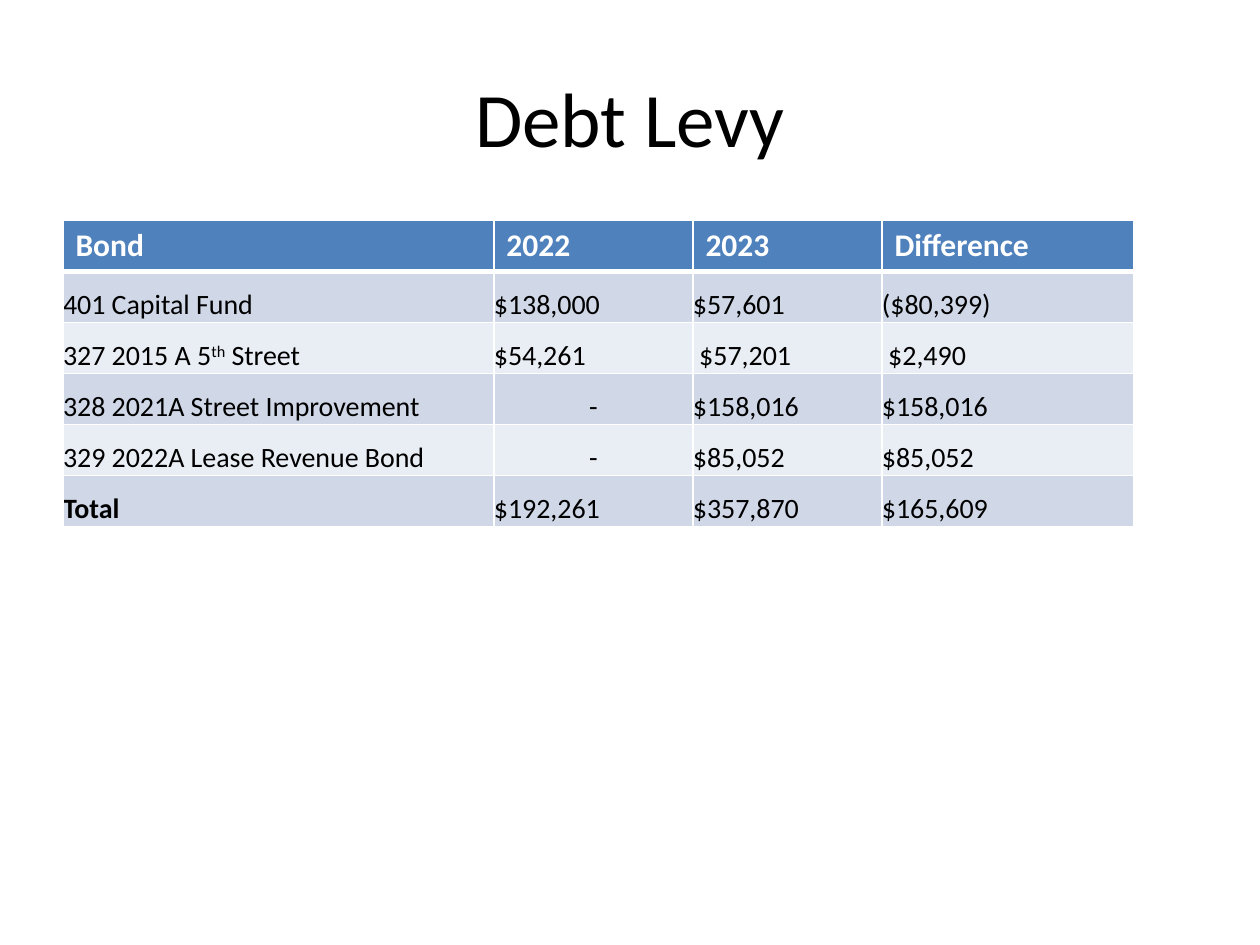
from dataclasses import dataclass

import pptx
import pptx.dml.color
import pptx.enum.text
import pptx.oxml
import pptx.oxml.ns
import pptx.util
from pptx.util import Inches

RGBColor = pptx.dml.color.RGBColor
Align = pptx.enum.text.PP_ALIGN
Anchor = pptx.enum.text.MSO_ANCHOR

BLACK = RGBColor(0x00, 0x00, 0x00)
WHITE = RGBColor(0xFF, 0xFF, 0xFF)
HEADER_BLUE = RGBColor(0x4F, 0x81, 0xBD)
BAND_DARK = RGBColor(0xD0, 0xD8, 0xE8)
BAND_LIGHT = RGBColor(0xE9, 0xED, 0xF4)
FONT = "Calibri"


@dataclass(frozen=True)
class Span:
    text: str
    bold: bool = False
    raised: bool = False


@dataclass(frozen=True)
class LevyRow:
    bond: tuple[Span, ...]
    amounts: tuple[str, str, str]


HEADINGS = ("Bond", "2022", "2023", "Difference")
COLUMN_WIDTHS = (3.42, 1.58, 1.5, 2)
LEVIES = (
    LevyRow((Span("401 Capital Fund"),), ("$138,000", "$57,601", "($80,399)")),
    LevyRow((Span("327 2015 A 5"), Span("th", raised=True), Span(" Street")),
            ("$54,261", " $57,201", " $2,490")),
    LevyRow((Span("328 2021A Street Improvement"),), ("-", "$158,016", "$158,016")),
    LevyRow((Span("329 2022A Lease Revenue Bond"),), ("-", "$85,052", "$85,052")),
    LevyRow((Span("Total", bold=True),), ("$192,261", "$357,870", "$165,609")),
)


def add_spans(para, spans: tuple[Span, ...], size: int, color: RGBColor) -> None:
    for span in spans:
        run = para.add_run()
        run.text = span.text
        run.font.name = FONT
        run.font.size = pptx.util.Pt(size)
        run.font.bold = span.bold
        run.font.color.rgb = color
        if span.raised:
            run.font._element.set("baseline", "30000")


def set_borders(cell, top: int = 1, bottom: int = 1) -> None:
    properties = cell._tc.get_or_add_tcPr()
    for side, width in (("L", 1), ("R", 1), ("T", top), ("B", bottom)):
        properties.append(pptx.oxml.parse_xml(
            f'<a:ln{side} {pptx.oxml.ns.nsdecls("a")} w="{pptx.util.Pt(width)}">'
            f'<a:solidFill><a:srgbClr val="{WHITE}"/></a:solidFill></a:ln{side}>'))


def fill_cell(cell, color: RGBColor) -> None:
    cell.fill.solid()
    cell.fill.fore_color.rgb = color


def draw_title(page) -> None:
    box = page.shapes.add_textbox(Inches(0.5), Inches(0.3), Inches(9), Inches(1.25))
    box.text_frame.word_wrap = True
    box.text_frame.vertical_anchor = Anchor.MIDDLE
    para = box.text_frame.paragraphs[0]
    para.alignment = Align.CENTER
    add_spans(para, (Span("Debt Levy"),), 44, BLACK)


def draw_heading(cell, heading: str) -> None:
    set_borders(cell, bottom=3)
    fill_cell(cell, HEADER_BLUE)
    add_spans(cell.text_frame.paragraphs[0], (Span(heading, bold=True),), 18, WHITE)


def draw_body_cell(cell, spans: tuple[Span, ...], row: int) -> None:
    set_borders(cell, top=3 if row == 1 else 1)
    fill_cell(cell, BAND_DARK if row % 2 else BAND_LIGHT)
    cell.vertical_anchor = Anchor.BOTTOM
    cell.margin_left = cell.margin_right = cell.margin_top = cell.margin_bottom = 0
    para = cell.text_frame.paragraphs[0]
    if spans[0].text == "-":
        para.alignment = Align.CENTER
    add_spans(para, spans, 16, BLACK)


def draw_levy_table(page) -> None:
    table = page.shapes.add_table(
        len(LEVIES) + 1, len(HEADINGS),
        Inches(0.5), Inches(1.75), Inches(8.5), Inches(2.43)).table
    for column, width in zip(table.columns, COLUMN_WIDTHS):
        column.width = Inches(width)
    for column, heading in enumerate(HEADINGS):
        draw_heading(table.cell(0, column), heading)
    for row, levy in enumerate(LEVIES, start=1):
        contents = (levy.bond, *((Span(amount),) for amount in levy.amounts))
        for column, spans in enumerate(contents):
            draw_body_cell(table.cell(row, column), spans, row)


def main() -> None:
    deck = pptx.Presentation()
    deck.slide_width, deck.slide_height = Inches(10), Inches(7.5)
    page = deck.slides.add_slide(deck.slide_layouts[6])

    # Title
    draw_title(page)
    # Levy by bond and year
    draw_levy_table(page)

    deck.save("out.pptx")


if __name__ == "__main__":
    main()
